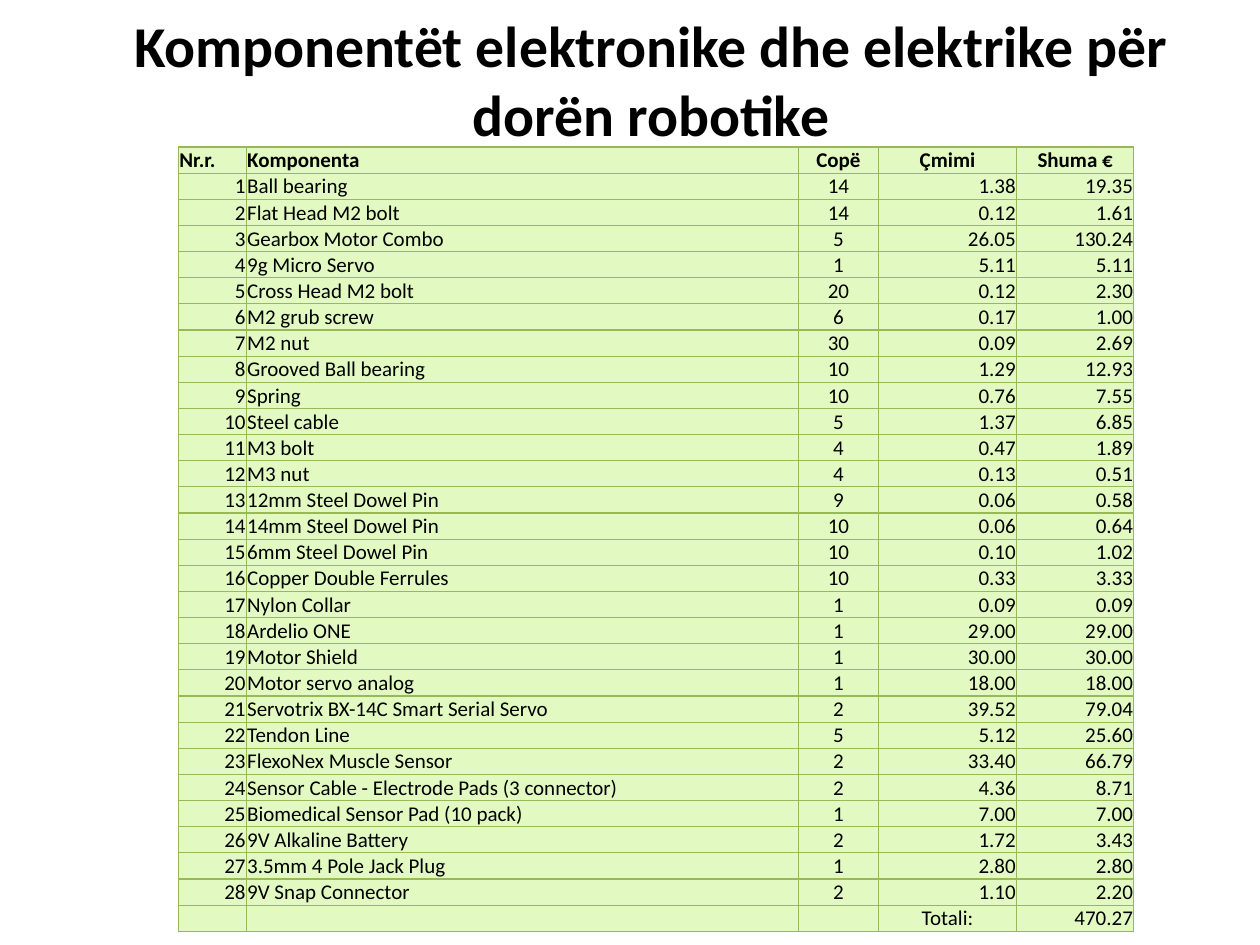
from lxml import etree
from pptx import Presentation
from pptx.dml.color import RGBColor
from pptx.enum.text import MSO_ANCHOR, PP_ALIGN
from pptx.oxml.ns import qn
from pptx.util import Pt

LEFT, CENTER, RIGHT = PP_ALIGN.LEFT, PP_ALIGN.CENTER, PP_ALIGN.RIGHT
MIDDLE, BOTTOM = MSO_ANCHOR.MIDDLE, MSO_ANCHOR.BOTTOM

FONT = "Calibri"
BLACK, CELL_GREEN, BORDER_GREEN = "000000", "E2FAC2", "98B955"
TITLE = "Komponentët elektronike dhe elektrike për dorën robotike"

# Table content
HEADINGS = ["Nr.r.", "Komponenta", "Copë", "Çmimi", "Shuma €"]
COMPONENTS = [
    ("Ball bearing", "14", "1.38", "19.35"),
    ("Flat Head M2 bolt", "14", "0.12", "1.61"),
    ("Gearbox Motor Combo", "5", "26.05", "130.24"),
    ("9g Micro Servo", "1", "5.11", "5.11"),
    ("Cross Head M2 bolt", "20", "0.12", "2.30"),
    ("M2 grub screw", "6", "0.17", "1.00"),
    ("M2 nut", "30", "0.09", "2.69"),
    ("Grooved Ball bearing", "10", "1.29", "12.93"),
    ("Spring", "10", "0.76", "7.55"),
    ("Steel cable", "5", "1.37", "6.85"),
    ("M3 bolt", "4", "0.47", "1.89"),
    ("M3 nut", "4", "0.13", "0.51"),
    ("12mm Steel Dowel Pin", "9", "0.06", "0.58"),
    ("14mm Steel Dowel Pin", "10", "0.06", "0.64"),
    ("6mm Steel Dowel Pin", "10", "0.10", "1.02"),
    ("Copper Double Ferrules", "10", "0.33", "3.33"),
    ("Nylon Collar", "1", "0.09", "0.09"),
    ("Ardelio ONE", "1", "29.00", "29.00"),
    ("Motor Shield", "1", "30.00", "30.00"),
    ("Motor servo analog", "1", "18.00", "18.00"),
    ("Servotrix BX-14C Smart Serial Servo", "2", "39.52", "79.04"),
    ("Tendon Line", "5", "5.12", "25.60"),
    ("FlexoNex Muscle Sensor", "2", "33.40", "66.79"),
    ("Sensor Cable - Electrode Pads (3 connector)", "2", "4.36", "8.71"),
    ("Biomedical Sensor Pad (10 pack)", "1", "7.00", "7.00"),
    ("9V Alkaline Battery", "2", "1.72", "3.43"),
    ("3.5mm 4 Pole Jack Plug", "1", "2.80", "2.80"),
    ("9V Snap Connector", "2", "1.10", "2.20"),
]
TOTAL = ["", "", "", "Totali:", "470.27"]

# Table layout
COLUMN_WIDTHS = [38.8, 315.6, 45.6, 79, 67]
ROW_HEIGHT = 14.95
HEADING_ALIGNMENTS = [LEFT, LEFT, CENTER, CENTER, CENTER]
BODY_ALIGNMENTS = [RIGHT, LEFT, CENTER, RIGHT, RIGHT]
TOTAL_ALIGNMENTS = [RIGHT, LEFT, CENTER, CENTER, RIGHT]
CELL_FORMAT = {
    "margin_left": Pt(0.5),
    "margin_right": Pt(0.5),
    "margin_top": Pt(0.5),
    "margin_bottom": Pt(0),
    "vertical_anchor": BOTTOM,
}


def color(hex_string):
    return RGBColor.from_string(hex_string)


def apply_format(target, values):
    for name, value in values.items():
        setattr(target, name, value)


def write_text(paragraph, text, size, bold, alignment):
    paragraph.alignment = alignment
    if not text:
        # An empty cell keeps the row's text size
        etree.SubElement(paragraph._p, qn("a:endParaRPr"), sz=str(size * 100))
        return
    run = paragraph.add_run()
    run.text = text
    apply_format(run.font, {"name": FONT, "size": Pt(size), "bold": bold})
    run.font.color.rgb = color(BLACK)


def add_borders(cell):
    properties = cell._tc.get_or_add_tcPr()
    for position, side in enumerate(("lnL", "lnR", "lnT", "lnB")):
        line = etree.Element(qn(f"a:{side}"), w=str(Pt(0.75)))
        fill = etree.SubElement(line, qn("a:solidFill"))
        etree.SubElement(fill, qn("a:srgbClr"), val=BORDER_GREEN)
        properties.insert(position, line)


def add_title(slide):
    shape = slide.shapes.add_textbox(Pt(48), Pt(0), Pt(648), Pt(90))
    frame = shape.text_frame
    apply_format(frame, {"word_wrap": True, "vertical_anchor": MIDDLE})
    write_text(frame.paragraphs[0], TITLE, 33, True, CENTER)


def fill_row(table, row, texts, alignments, bold=False):
    table.rows[row].height = Pt(ROW_HEIGHT)
    for column, (text, alignment) in enumerate(zip(texts, alignments)):
        cell = table.cell(row, column)
        apply_format(cell, CELL_FORMAT)
        cell.fill.solid()
        cell.fill.fore_color.rgb = color(CELL_GREEN)
        add_borders(cell)
        write_text(cell.text_frame.paragraphs[0], text, 12, bold, alignment)


def add_component_table(slide):
    row_count = len(COMPONENTS) + 2
    table = slide.shapes.add_table(
        row_count, len(HEADINGS), Pt(102), Pt(84),
        Pt(sum(COLUMN_WIDTHS)), Pt(ROW_HEIGHT * row_count),
    ).table
    for column, width in zip(table.columns, COLUMN_WIDTHS):
        column.width = Pt(width)

    fill_row(table, 0, HEADINGS, HEADING_ALIGNMENTS, bold=True)
    for number, component in enumerate(COMPONENTS, start=1):
        fill_row(table, number, [str(number), *component], BODY_ALIGNMENTS)
    fill_row(table, row_count - 1, TOTAL, TOTAL_ALIGNMENTS)


def main():
    presentation = Presentation()
    apply_format(presentation, {"slide_width": Pt(720), "slide_height": Pt(540)})
    slide = presentation.slides.add_slide(presentation.slide_layouts[6])
    add_title(slide)
    add_component_table(slide)
    presentation.save("out.pptx")


if __name__ == "__main__":
    main()
